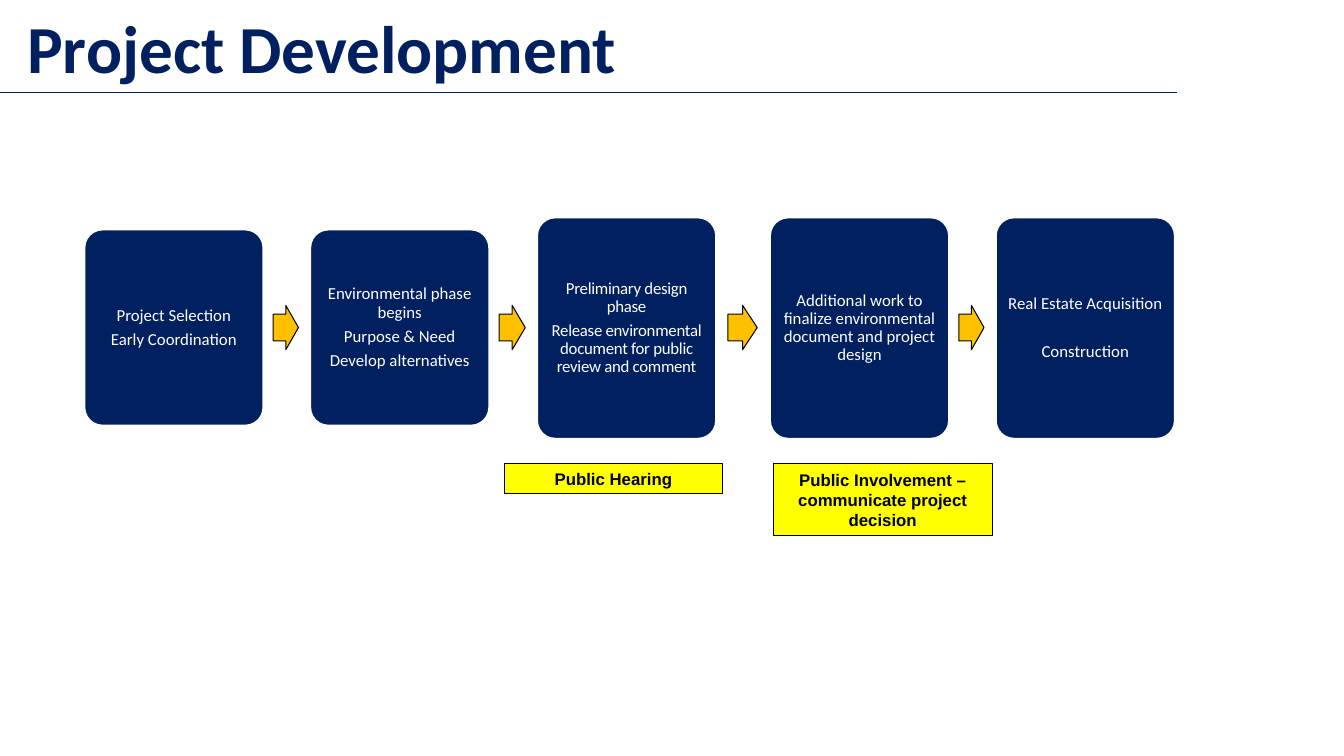
from pptx import Presentation
from pptx.dml.color import RGBColor
from pptx.enum.shapes import MSO_CONNECTOR, MSO_SHAPE
from pptx.enum.text import MSO_ANCHOR, MSO_AUTO_SIZE, PP_ALIGN
from pptx.oxml.ns import qn
from pptx.util import Pt
from lxml import etree

PX = 9144  # 100 px to the inch
NAVY, WHITE, BLACK, AMBER, YELLOW = "002060", "FFFFFF", "000000", "FFC000", "FFFF00"
ROUNDED, ARROW, RECT = MSO_SHAPE.ROUNDED_RECTANGLE, MSO_SHAPE.RIGHT_ARROW, MSO_SHAPE.RECTANGLE
CENTER, LEFT = PP_ALIGN.CENTER, PP_ALIGN.LEFT
MIDDLE, BOTTOM = MSO_ANCHOR.MIDDLE, MSO_ANCHOR.BOTTOM


def add_box(kind, x, y, w, h, fill, line, line_width):
    sp = slide.shapes.add_shape(kind, x * PX, y * PX, w * PX, h * PX)
    sp.shadow.inherit = False
    sp.fill.solid()
    sp.fill.fore_color.rgb = RGBColor.from_string(fill)
    sp.line.color.rgb = RGBColor.from_string(line)
    sp.line.width = Pt(line_width)
    return sp


def add_text(p, text, font, size, color, bold, align):
    p.alignment = align
    r = p.add_run()
    r.text = text
    r.font.name = font
    r.font.size = Pt(size)
    r.font.bold = bold
    r.font.color.rgb = RGBColor.from_string(color)
    return r


prs = Presentation()
prs.slide_width, prs.slide_height = 1333 * PX, 750 * PX
slide = prs.slides.add_slide(prs.slide_layouts[5])

# Title and rule
title = slide.shapes.title
title.left, title.top, title.width, title.height = 17 * PX, 0, 1300 * PX, 92 * PX
tf = title.text_frame
tf.auto_size = MSO_AUTO_SIZE.NONE
tf.vertical_anchor = BOTTOM
tf.paragraphs[0].line_spacing = 0.9
add_text(tf.paragraphs[0], "Project Development", "Calibri", 48, NAVY, True, LEFT)

rule = slide.shapes.add_connector(MSO_CONNECTOR.STRAIGHT, 0, 92 * PX, 1167 * PX, 92 * PX)
rule.line.color.rgb = RGBColor.from_string(NAVY)
rule.line.width = Pt(0.5)
etree.SubElement(rule._element.spPr, qn("a:effectLst"))

# Process steps: left, height, letter spacing, (space before, text) pairs
STEP_W, MID_Y = 177, 325
steps = [
    (84, 194, 0, [(0, "Project Selection"), (0, "Early Coordination")]),
    (308, 194, 0, [(0, "Environmental phase begins"), (0, "Purpose & Need"),
                   (0, "Develop alternatives")]),
    (533, 219, -20, [(0, "Preliminary design phase"),
                     (0, "Release environmental document for public review and comment")]),
    (764, 219, 0, [(0, "Additional work to finalize environmental document and project design")]),
    (988, 219, 0, [(0, "Real Estate Acquisition"), (17, "Construction")]),
]
for x, h, spacing, lines in steps:
    step = add_box(ROUNDED, x, MID_Y - h // 2, STEP_W, h, NAVY, WHITE, 1)
    step.adjustments[0] = 0.1
    tf = step.text_frame
    tf.word_wrap = True
    tf.vertical_anchor = MIDDLE
    tf.margin_left = tf.margin_right = tf.margin_top = tf.margin_bottom = 5 * PX
    for i, (before, text) in enumerate(lines):
        p = tf.paragraphs[0] if i == 0 else tf.add_paragraph()
        p.line_spacing = 0.9
        p.space_after = Pt(4.2)
        if before:
            p.space_before = Pt(before)
        r = add_text(p, text, "Calibri", 12, WHITE, False, CENTER)
        if spacing:
            r.font._element.set("spc", str(spacing))

# Arrows between steps
ARROW_H = 44
for x, w in [(271, 25), (495, 26), (722, 29), (951, 25)]:
    arrow = add_box(ARROW, x, MID_Y - ARROW_H // 2, w, ARROW_H, AMBER, BLACK, 0.75)
    arrow.adjustments[0], arrow.adjustments[1] = 0.6, 0.5

# Public milestones
milestones = [(500, 30, "Public Hearing"),
              (767, 71, "Public Involvement – communicate project decision")]
for x, h, text in milestones:
    milestone = add_box(RECT, x, 460, 217, h, YELLOW, BLACK, 0.75)
    tf = milestone.text_frame
    tf.word_wrap = True
    tf.vertical_anchor = MIDDLE
    add_text(tf.paragraphs[0], text, "Arial", 12, BLACK, True, CENTER)

prs.save("out.pptx")
